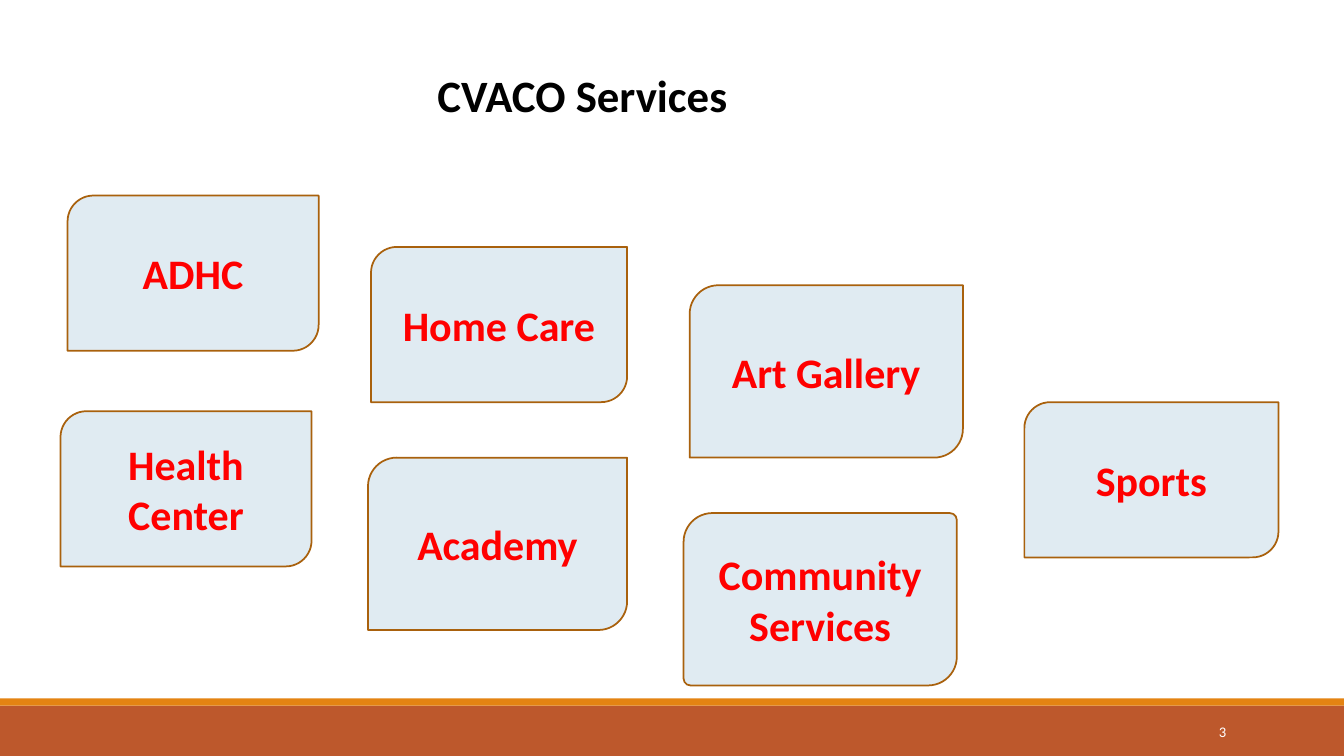
from pptx import Presentation
from pptx.dml.color import RGBColor
from pptx.enum.shapes import MSO_SHAPE
from pptx.enum.text import MSO_ANCHOR, PP_ALIGN
from pptx.util import Inches, Pt

RECTANGLE = MSO_SHAPE.RECTANGLE
CARD_SHAPE = MSO_SHAPE.ROUND_2_DIAG_RECTANGLE
TOP, MIDDLE = MSO_ANCHOR.TOP, MSO_ANCHOR.MIDDLE
LEFT, CENTER, RIGHT = PP_ALIGN.LEFT, PP_ALIGN.CENTER, PP_ALIGN.RIGHT

RUST = RGBColor(0xBD, 0x58, 0x2C)
ORANGE = RGBColor(0xE4, 0x83, 0x12)
PALE_BLUE = RGBColor(0xE0, 0xEB, 0xF2)
BROWN = RGBColor(0xA9, 0x61, 0x0D)
RED = RGBColor(0xFF, 0x00, 0x00)
BLACK = RGBColor(0x00, 0x00, 0x00)
WHITE = RGBColor(0xFF, 0xFF, 0xFF)

SLIDE_WIDTH, SLIDE_HEIGHT = 13.33, 7.5

# Service, left, top, width, height
SERVICES = [
    ("Home Care", 3.68, 2.45, 2.54, 1.54),
    ("Art Gallery", 6.84, 2.83, 2.71, 1.71),
    ("Health Center", 0.6, 4.08, 2.49, 1.54),
    ("Academy", 3.65, 4.54, 2.57, 1.71),
    ("Community Services", 6.78, 5.09, 2.71, 1.71),
    ("Sports", 10.16, 3.99, 2.52, 1.54),
    ("ADHC", 0.67, 1.94, 2.49, 1.54),
]
SOFT_CORNERS = {"Community Services": 0.04}


def write_text(shape, text, size=30, color=BLACK, bold=False,
               align=LEFT, anchor=TOP):
    frame = shape.text_frame
    frame.word_wrap = True
    frame.vertical_anchor = anchor
    para = frame.paragraphs[0]
    para.alignment = align
    span = para.add_run()
    span.text = text
    span.font.name = "Calibri"
    span.font.size = Pt(size)
    span.font.bold = bold
    span.font.color.rgb = color


class SlideBuilder:
    """Holds the current page and the shared style of its elements."""

    def __init__(self, page):
        self.page = page
        self.border_width = Pt(1.25)

    def shape(self, kind, place, fill, border=None):
        shape = self.page.shapes.add_shape(kind, *map(Inches, place))
        shape.shadow.inherit = False
        shape.fill.solid()
        shape.fill.fore_color.rgb = fill
        if border is None:
            shape.line.fill.background()
        else:
            shape.line.color.rgb = border
            shape.line.width = self.border_width
        return shape

    def band(self, top, height, fill):
        self.shape(RECTANGLE, (0, top, SLIDE_WIDTH, height), fill)

    def card(self, text, place, second_corner=0):
        card = self.shape(CARD_SHAPE, place, PALE_BLUE, BROWN)
        card.adjustments[1] = second_corner
        write_text(card, text, color=RED, bold=True, align=CENTER, anchor=MIDDLE)

    def label(self, text, place, **style):
        box = self.page.shapes.add_textbox(*map(Inches, place))
        write_text(box, text, **style)


def main():
    deck = Presentation()
    deck.slide_width = Inches(SLIDE_WIDTH)
    deck.slide_height = Inches(SLIDE_HEIGHT)
    builder = SlideBuilder(deck.slides.add_slide(deck.slide_layouts[6]))

    # Footer bands
    builder.band(7, 0.5, RUST)
    builder.band(6.93, 0.07, ORANGE)

    # Service cards
    for name, *place in SERVICES:
        builder.card(name, place, SOFT_CORNERS.get(name, 0))

    # Title and page number
    builder.label("CVACO Services", (4.24, 0.62, 3.86, 0.64), size=32, bold=True)
    builder.label("3", (10.83, 7.06, 1.43, 0.4), size=10.5, color=WHITE,
                  align=RIGHT, anchor=MIDDLE)

    deck.save("out.pptx")


if __name__ == "__main__":
    main()
